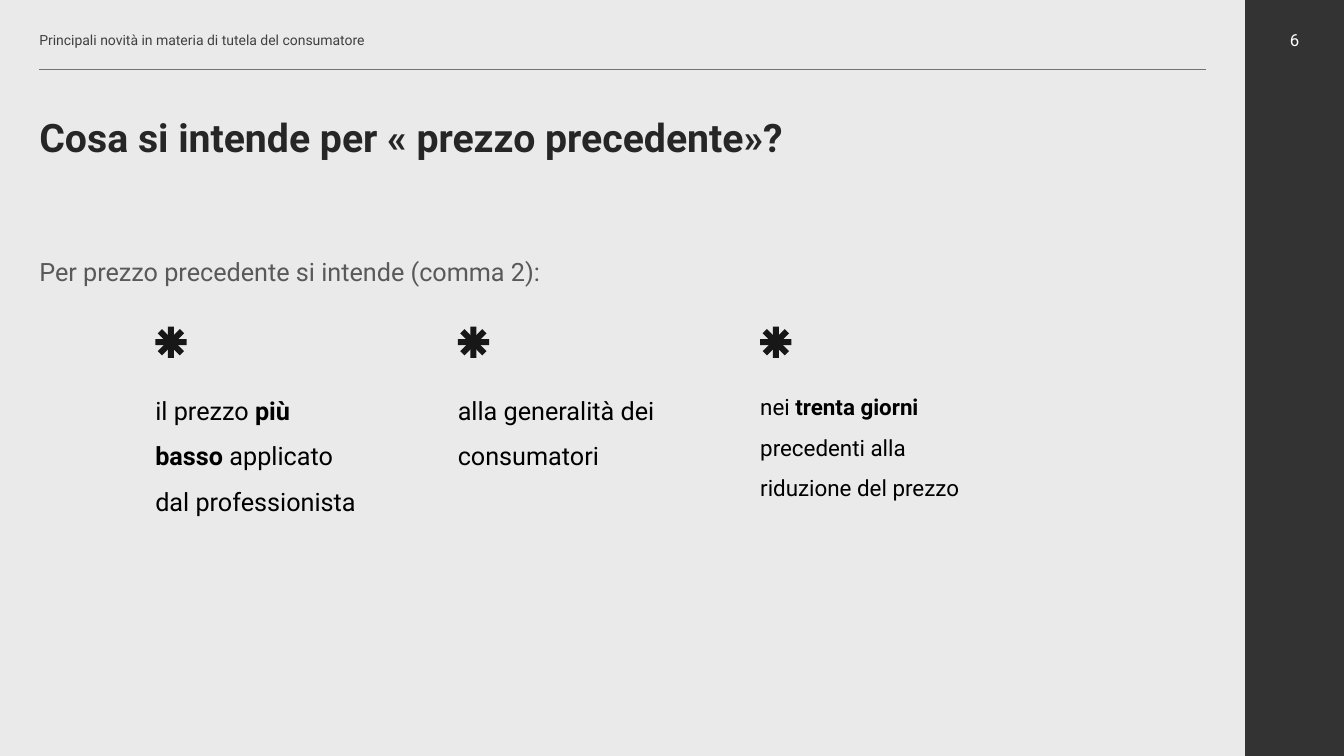
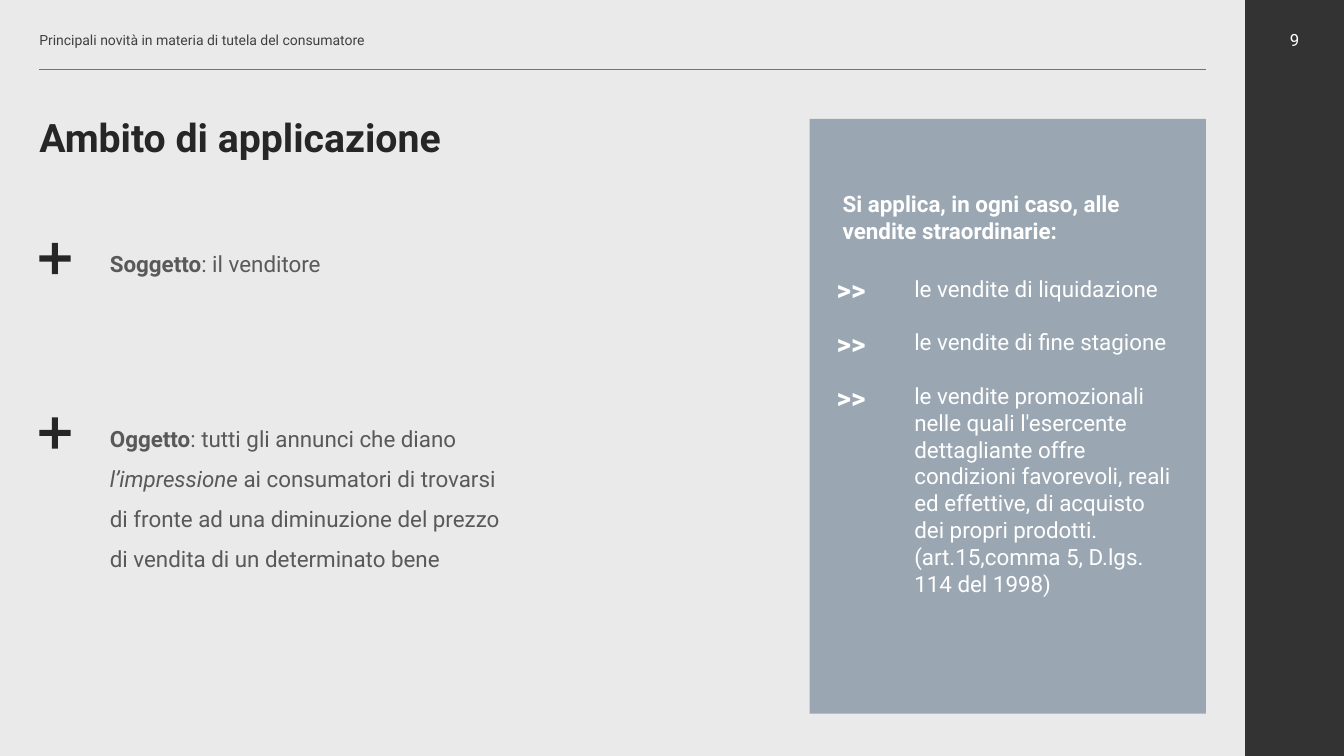
from lxml.etree import SubElement as Sub
from pptx import Presentation
from pptx.dml.color import RGBColor
from pptx.enum.shapes import MSO_CONNECTOR as Link, MSO_SHAPE as Shape
from pptx.enum.text import MSO_ANCHOR as Anchor, MSO_AUTO_SIZE as Fit, PP_ALIGN as Align
from pptx.oxml.ns import qn
from pptx.util import Inches, Pt

FONT = "Roboto"
PAPER, BAND, RULE, PANEL = "EAEAEA", "333333", "737373", "9AA7B2"
DARK, INK, STAR, GREY, HEAD, WHITE = "262626", "000000", "181717", "595959", "404040", "FFFFFF"
EDGE = 0.39
SIGN = 0.31


def rgb(code):
    return RGBColor.from_string(code)


class Deck:
    """Holds the style and the current slide, and draws each kind of element."""

    def __init__(self):
        self.prs = Presentation()
        self.prs.slide_width, self.prs.slide_height = Inches(13.33), Inches(7.5)
        fill = self.prs.slide_master.background.fill
        fill.solid()
        fill.fore_color.rgb = rgb(PAPER)

    def start(self, title, page):
        self.slide = self.prs.slides.add_slide(self.prs.slide_layouts[5])
        self.block(12.35, 0, 0.98, 7.5, BAND)
        self.rule(EDGE, 0.69, 11.96)
        self.text(EDGE, 0.2, 11.56, 0.39, ["Principali novità in materia di tutela del consumatore"],
                  10, HEAD, pad=(0, 0, 0, 0), anchor=Anchor.MIDDLE)
        self.text(12.35, 0.2, 0.98, 0.39, [page], 12, WHITE, pad=(0, 0, 0, 0),
                  anchor=Anchor.MIDDLE, align=Align.CENTER)
        head = self.slide.shapes.title
        head.left, head.top, head.width, head.height = map(Inches, (EDGE, 1.18, 11.96, 0.42))
        self.typeset(head.text_frame, [title], 28, DARK, bold=True, pad=(0, 0, EDGE, 0), lead=0.9)

    def block(self, x, y, w, h, color, kind=Shape.RECTANGLE):
        box = self.slide.shapes.add_shape(kind, *map(Inches, (x, y, w, h)))
        box.shadow.inherit = False
        box.fill.solid()
        box.fill.fore_color.rgb = rgb(color)
        box.line.fill.background()
        return box

    def plus(self, x, y, color, turn=0):
        sign = self.block(x, y, SIGN, SIGN, color, Shape.CROSS)
        sign.adjustments[0] = 0.403
        sign.rotation = turn

    def star(self, x, y):
        for turn in (0, 45):
            self.plus(x, y, STAR, turn)

    def rule(self, x, y, end):
        line = self.slide.shapes.add_connector(Link.STRAIGHT, *map(Inches, (x, y, end, y)))
        line.line.color.rgb = rgb(RULE)
        line.line.width = Pt(1)
        Sub(line._element.spPr, qn("a:effectLst"))

    def text(self, x, y, w, h, paras, size, color, **style):
        box = self.slide.shapes.add_textbox(*map(Inches, (x, y, w, h)))
        self.typeset(box.text_frame, paras, size, color, **style)

    def typeset(self, frame, paras, size, color, bold=None, pad=(0.1, 0.05, 0.1, 0.05),
                lead=None, gaps=(), anchor=Anchor.TOP, align=Align.LEFT):
        frame.word_wrap = True
        frame.auto_size = Fit.NONE
        frame.vertical_anchor = anchor
        (frame.margin_left, frame.margin_top,
         frame.margin_right, frame.margin_bottom) = map(Inches, pad)
        for i, runs in enumerate(paras):
            para = frame.add_paragraph() if i else frame.paragraphs[0]
            para.alignment = align
            if lead:
                para.line_spacing = lead
            if i and gaps:
                para.space_before = Pt(gaps[i - 1])
            font = para.font
            font.name, font.size, font.bold = FONT, Pt(size), bold
            font.color.rgb = rgb(color)
            for words, mark in [(runs, "")] if isinstance(runs, str) else runs:
                run = para.add_run()
                run.text = words
                if mark == "b":
                    run.font.bold = True
                elif mark == "i":
                    run.font.italic = True


def price(deck):
    deck.start("Cosa si intende per « prezzo precedente»?", "6")
    deck.text(EDGE, 2.39, 11.96, 1.05, ["Per prezzo precedente si intende (comma 2):"],
              18, GREY, pad=(0, 0, EDGE, 0), lead=1.5)
    cols = [
        (18, 1.76, [("il prezzo ", ""), ("più basso ", "b"), ("applicato dal professionista", "")]),
        (18, 1.24, "alla generalità dei consumatori"),
        (16, 1.61, [("nei ", ""), ("trenta giorni ", "b"),
                    ("precedenti alla riduzione del prezzo", "")]),
    ]
    for i, (size, high, runs) in enumerate(cols):
        x = 1.54 + 3 * i
        deck.star(x, 3.24)
        deck.text(x, 3.77, 2.38, high, [runs], size, INK, pad=(0, 0, EDGE, EDGE), lead=1.5)


def scope(deck):
    deck.start("Ambito di applicazione", "9")
    deck.block(8.03, 1.18, 3.93, 5.9, PANEL)
    deck.text(8.26, 1.84, 3.33, 0.64, ["Si applica, in ogni caso, alle vendite straordinarie:"],
              16, WHITE, bold=True)
    for i in range(3):
        deck.text(8.2, 2.65 + 0.54 * i, 0.77, 0.44, [">>"], 20, WHITE, bold=True)
    deck.text(8.97, 2.68, 2.78, 3.74, [
        "le vendite di liquidazione",
        "le vendite di fine stagione",
        "le vendite promozionali nelle quali l'esercente dettagliante offre condizioni "
        "favorevoli, reali ed effettive, di acquisto dei propri prodotti.",
        "(art.15,comma 5, D.lgs. 114 del 1998)",
    ], 16, WHITE, gaps=(19, 19, 0))
    items = [
        (2.35, 0.8, [("Soggetto", "b"), (": il venditore", "")]),
        (4.08, 2.01, [("Oggetto", "b"), (": tutti gli annunci che diano ", ""),
                      ("l’impressione", "i"),
                      (" ai consumatori di trovarsi di fronte ad una diminuzione del prezzo "
                       "di vendita di un determinato bene", "")]),
    ]
    for y, high, runs in items:
        deck.plus(EDGE, y + 0.06, DARK)
        deck.text(EDGE + SIGN, y, 4.77, high, [runs], 16, GREY,
                  pad=(EDGE, 0, EDGE, EDGE), lead=1.5)


def main():
    deck = Deck()
    price(deck)
    scope(deck)
    deck.prs.save("out.pptx")


if __name__ == "__main__":
    main()
